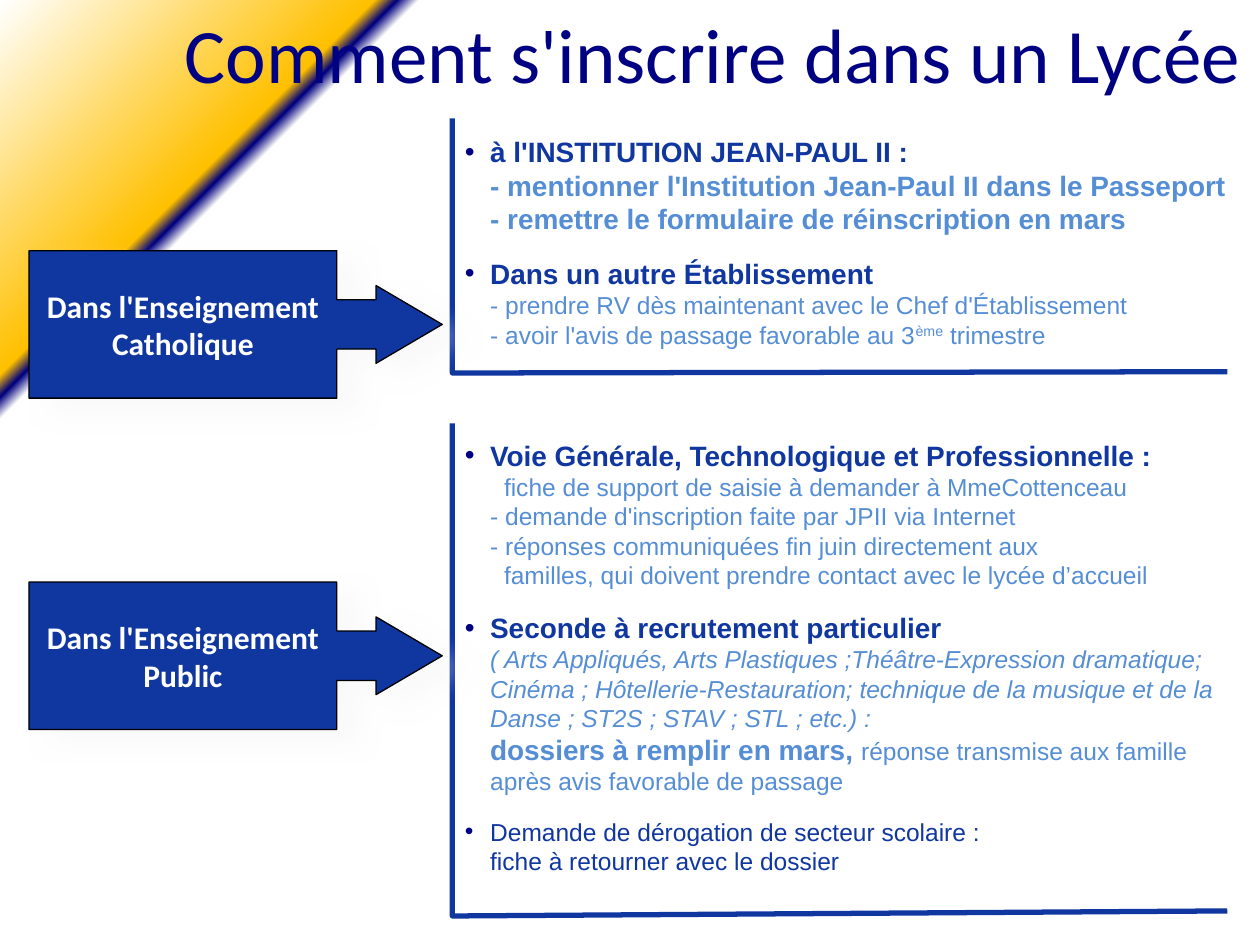
from lxml import etree
from pptx import Presentation
from pptx.dml.color import RGBColor
from pptx.enum.shapes import MSO_SHAPE
from pptx.enum.text import MSO_ANCHOR, MSO_AUTO_SIZE, PP_ALIGN
from pptx.oxml.ns import qn
from pptx.util import Inches, Pt

CALLOUT = MSO_SHAPE.RIGHT_ARROW_CALLOUT
TOP, MIDDLE = MSO_ANCHOR.TOP, MSO_ANCHOR.MIDDLE
CENTER, LEFT = PP_ALIGN.CENTER, PP_ALIGN.LEFT
NO_FIT = MSO_AUTO_SIZE.NONE

NAVY, BLUE, LIGHT, WHITE = "000082", "1036A0", "558ED5", "FFFFFF"
BACKGROUND_STOPS = [(0, WHITE), (81, WHITE), (82, NAVY), (83, "FFC000"), (100, WHITE)]

FORMATS = {
    "title": dict(name="Calibri", size=Pt(44), bold=False, color=NAVY),
    "callout": dict(name="Calibri", size=Pt(18), bold=True, color=WHITE),
    "heading": dict(name="Arial", size=Pt(16), bold=True, color=BLUE),
    "strong": dict(name="Arial", size=Pt(16), bold=True, color=LIGHT),
    "detail": dict(name="Arial", size=Pt(14), bold=False, color=LIGHT),
    "italic": dict(name="Arial", size=Pt(14), bold=False, italic=True, color=LIGHT),
    "superscript": dict(name="Arial", size=Pt(14), bold=False, color=LIGHT),
    "request": dict(name="Arial", size=Pt(14), bold=False, color=BLUE),
}
INDENTS = {"bullet": (0.2, -0.2), "plain": (0.2, 0), "inset": (0.31, 0), "dash": (0.31, -0.11)}

CATHOLIC_LIST = [
    ("bullet", 12, [
        ("heading", "à l'INSTITUTION JEAN-PAUL II :\n"),
        ("strong", "- mentionner l'Institution Jean-Paul II dans le Passeport\n"
                   "- remettre le formulaire de réinscription en mars")]),
    ("bullet", 12, [
        ("heading", "Dans un autre Établissement\n"),
        ("detail", "- prendre RV dès maintenant avec le Chef d'Établissement\n"
                   "- avoir l'avis de passage favorable au 3"),
        ("superscript", "ème"),
        ("detail", " trimestre")]),
]
PUBLIC_LIST = [
    ("bullet", 0, [("heading", "Voie Générale, Technologique et Professionnelle :")]),
    ("inset", 0, [("detail", "fiche de support de saisie à demander à MmeCottenceau")]),
    ("plain", 0, [("detail", "- demande d'inscription faite par JPII via Internet")]),
    ("dash", 12, [
        ("detail", "- réponses communiquées fin juin directement aux\n"
                   "familles, qui doivent prendre contact avec le lycée d’accueil")]),
    ("bullet", 12, [
        ("heading", "Seconde à recrutement particulier\n"),
        ("italic", "( Arts Appliqués, Arts Plastiques ;Théâtre-Expression dramatique; "
                   "Cinéma ; Hôtellerie-Restauration; technique de la musique et de la "
                   "Danse ; ST2S ; STAV ; STL ; etc.) :\n"),
        ("strong", "dossiers à remplir en mars, "),
        ("detail", "réponse transmise aux famille après avis favorable de passage")]),
    ("bullet", 12, [
        ("request", "Demande de dérogation de secteur scolaire :\n"
                    "fiche à retourner avec le dossier")]),
]


def rgb(value):
    return RGBColor.from_string(value)


def add_element(parent, tag, **attributes):
    values = {key: str(value) for key, value in attributes.items()}
    return etree.SubElement(parent, qn(tag), values)


def place(shape, box):
    for name, value in zip(("left", "top", "width", "height"), box):
        setattr(shape, name, Inches(value))


def add_run(paragraph, text, style):
    run = paragraph.add_run()
    run.text = text
    for name, value in FORMATS[style].items():
        if name == "color":
            run.font.color.rgb = rgb(value)
        else:
            setattr(run.font, name, value)
    if style == "superscript":
        run.font._element.set("baseline", "30000")


def add_lines(paragraph, text, style):
    for number, line in enumerate(text.split("\n")):
        if number:
            paragraph.add_line_break()
            size = FORMATS[style]["size"].pt
            add_element(paragraph._p[-1], "a:rPr", sz=int(size * 100))
        if line:
            add_run(paragraph, line, style)


def set_indent(paragraph, kind):
    margin, indent = INDENTS[kind]
    properties = paragraph._p.get_or_add_pPr()
    properties.set("marL", str(Inches(margin)))
    properties.set("indent", str(Inches(indent)))
    if kind == "bullet":
        add_element(add_element(properties, "a:buClr"), "a:srgbClr", val=NAVY)
        add_element(properties, "a:buFont", typeface="Arial")
        add_element(properties, "a:buChar", char="•")
    else:
        add_element(properties, "a:buNone")


def set_frame(shape, anchor, wrap):
    frame = shape.text_frame
    settings = dict(word_wrap=wrap, auto_size=NO_FIT, vertical_anchor=anchor)
    for name, value in settings.items():
        setattr(frame, name, value)
    return frame


def each_paragraph(frame, items):
    for number, item in enumerate(items):
        yield (frame.add_paragraph() if number else frame.paragraphs[0]), item


def paint_background(slide):
    fill = slide.background.fill
    fill.gradient()
    gradient = slide.background._cSld.find(".//" + qn("a:gradFill"))
    stops = gradient.find(qn("a:gsLst"))
    for stop in list(stops):
        stops.remove(stop)
    for position, color in BACKGROUND_STOPS:
        stop = add_element(stops, "a:gs", pos=position * 1000)
        add_element(stop, "a:srgbClr", val=color)
    gradient.find(qn("a:lin")).set("ang", str(225 * 60000))


def fill_title(title, box):
    place(title, box)
    paragraph = set_frame(title, MIDDLE, True).paragraphs[0]
    paragraph.alignment = CENTER
    paragraph.line_spacing = 0.9
    add_run(paragraph, "Comment s'inscrire dans un Lycée", "title")


def fill_list(placeholder, box, items):
    place(placeholder, box)
    frame = set_frame(placeholder, TOP, True)
    for paragraph, (kind, space_after, runs) in each_paragraph(frame, items):
        set_indent(paragraph, kind)
        settings = dict(alignment=LEFT, line_spacing=1.0,
                        space_before=Pt(0), space_after=Pt(space_after))
        for name, value in settings.items():
            setattr(paragraph, name, value)
        for style, text in runs:
            add_lines(paragraph, text, style)


def add_corner_line(slide, box, rise):
    left, top, width, height = box
    bottom = top + height
    builder = slide.shapes.build_freeform(Inches(left), Inches(top))
    builder.add_line_segments(
        [(Inches(left), Inches(bottom)), (Inches(left + width), Inches(bottom - rise))],
        close=False)
    corner = builder.convert_to_shape()
    corner.fill.background()
    corner.line.color.rgb = rgb(BLUE)
    corner.line.width = Pt(3)
    corner.shadow.inherit = False


def add_callout(slide, box, lines):
    callout = slide.shapes.add_shape(CALLOUT, *map(Inches, box))
    for number, value in enumerate((0.335, 0.264, 0.449, 0.745)):
        callout.adjustments[number] = value
    callout.fill.solid()
    callout.fill.fore_color.rgb = rgb(BLUE)
    callout.line.color.rgb = rgb("000000")
    callout.line.width = Pt(0.75)
    callout.shadow.inherit = False
    effects = callout._element.spPr.find(qn("a:effectLst"))
    shadow = add_element(effects, "a:outerShdw", blurRad=Pt(14), dist=Pt(14),
                         dir=29 * 60000, algn="tl", rotWithShape=0)
    add_element(add_element(shadow, "a:srgbClr", val="F2F2F2"), "a:alpha", val=40000)
    frame = set_frame(callout, MIDDLE, False)
    for paragraph, line in each_paragraph(frame, lines):
        paragraph.alignment = CENTER
        add_run(paragraph, line, "callout")


def main():
    presentation = Presentation()
    presentation.slide_width, presentation.slide_height = Inches(10), Inches(7.5)
    slide = presentation.slides.add_slide(presentation.slide_layouts[3])
    title, catholic, public = slide.placeholders
    paint_background(slide)
    fill_title(title, (1.16, -0.16, 9, 1.25))
    fill_list(catholic, (3.59, 1.02, 6.56, 1.82), CATHOLIC_LIST)
    add_corner_line(slide, (3.59, 0.94, 6.15, 2.02), 0.01)
    add_callout(slide, (0.23, 1.99, 3.28, 1.17), ("Dans l'Enseignement", "Catholique"))
    fill_list(public, (3.59, 3.43, 6.15, 3.64), PUBLIC_LIST)
    add_corner_line(slide, (3.59, 3.36, 6.15, 3.91), 0.04)
    add_callout(slide, (0.23, 4.62, 3.28, 1.17), ("Dans l'Enseignement", "Public"))
    presentation.save("out.pptx")


if __name__ == "__main__":
    main()
